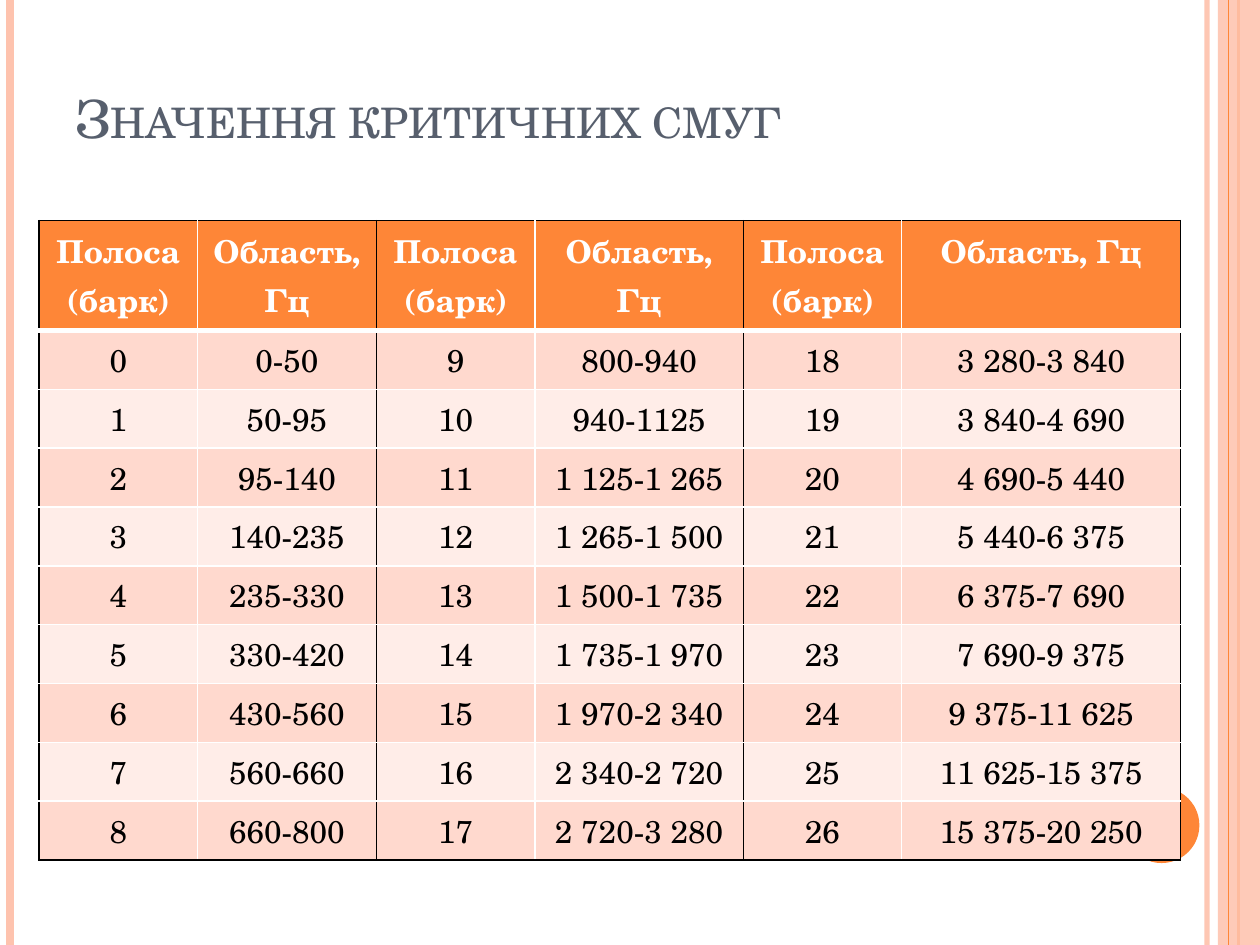
from dataclasses import dataclass

from lxml import etree
from pptx import Presentation
from pptx.dml.color import RGBColor
from pptx.enum.shapes import MSO_CONNECTOR, MSO_SHAPE
from pptx.enum.text import MSO_ANCHOR, PP_ALIGN
from pptx.oxml.ns import qn
from pptx.util import Pt

STRAIGHT = MSO_CONNECTOR.STRAIGHT
RECT, OVAL = MSO_SHAPE.RECTANGLE, MSO_SHAPE.OVAL
BOTTOM, CENTER = MSO_ANCHOR.BOTTOM, PP_ALIGN.CENTER

WIDTH, HEIGHT = 720, 540
FONT = "TeX Gyre Schola"
ORANGE, PEACH, SLATE = "FE8637", "FEC3AE", "575F6D"
WHITE, BLACK = "FFFFFF", "000000"
BANDS = ("FFD9CE", "FFEDE8")

COL_WIDTHS = (90.4, 102.4, 90.4, 119.2, 90.4, 159.5)
HEADER_HEIGHT, ROW_HEIGHT = 62.8, 33.6
HEADERS = ("Полоса (барк)", "Область, Гц")
RANGES = (
    ("0-50", "50-95", "95-140", "140-235", "235-330",
     "330-420", "430-560", "560-660", "660-800"),
    ("800-940", "940-1125", "1 125-1 265", "1 265-1 500", "1 500-1 735",
     "1 735-1 970", "1 970-2 340", "2 340-2 720", "2 720-3 280"),
    ("3 280-3 840", "3 840-4 690", "4 690-5 440", "5 440-6 375", "6 375-7 690",
     "7 690-9 375", "9 375-11 625", "11 625-15 375", "15 375-20 250"),
)
ROWS = len(RANGES[0])


@dataclass
class Stripe:
    x: float
    color: str
    width: float
    alpha: int = 100


@dataclass
class Block:
    kind: MSO_SHAPE
    x: float
    y: float
    w: float
    h: float
    color: str
    alpha: int = 100


DECOR = (
    Stripe(689.8, PEACH, 3, 93),
    Stripe(5.8, PEACH, 4.5),
    Stripe(707.8, ORANGE, 1.5),
    Block(RECT, 696, 0, 24, HEIGHT, PEACH, 87),
    Stripe(702, ORANGE, 0.75),
    Block(OVAL, 642.2, 450, 43.2, 43.2, ORANGE),
)


def rgb(value: str) -> RGBColor:
    return RGBColor.from_string(value)


def set_alpha(sp, percent: int) -> None:
    """Make the first colour of a shape or connector translucent."""
    if percent < 100:
        color = next(sp._element.spPr.iter(qn("a:srgbClr")))
        etree.SubElement(color, qn("a:alpha"), val=str(percent * 1000))


def add_stripe(slide, stripe: Stripe) -> None:
    x = Pt(stripe.x)
    line = slide.shapes.add_connector(STRAIGHT, x, 0, x, Pt(HEIGHT))
    line.line.color.rgb = rgb(stripe.color)
    line.line.width = Pt(stripe.width)
    set_alpha(line, stripe.alpha)
    etree.SubElement(line._element.spPr, qn("a:effectLst"))


def add_block(slide, block: Block) -> None:
    sp = slide.shapes.add_shape(
        block.kind, Pt(block.x), Pt(block.y), Pt(block.w), Pt(block.h))
    sp.shadow.inherit = False
    sp.fill.solid()
    sp.fill.fore_color.rgb = rgb(block.color)
    sp.line.fill.background()
    set_alpha(sp, block.alpha)


def style_run(r, size: float, color: str, bold: bool = False) -> None:
    r.font.name = FONT
    r.font.size = Pt(size)
    r.font.bold = bold
    r.font.color.rgb = rgb(color)


def add_title(slide, text: str) -> None:
    sp = slide.shapes.add_textbox(Pt(36), Pt(21.6), Pt(588), Pt(67))
    tf = sp.text_frame
    tf.word_wrap = True
    tf.vertical_anchor = BOTTOM
    tf.text = text
    r = tf.paragraphs[0].runs[0]
    style_run(r, 30, SLATE)
    r._r.get_or_add_rPr().set("cap", "small")


def set_border(cell, side: str, color: str, width: float = 1) -> None:
    ln = etree.SubElement(cell._tc.get_or_add_tcPr(), qn(f"a:ln{side}"),
                          w=str(Pt(width)))
    fill = etree.SubElement(ln, qn("a:solidFill"))
    etree.SubElement(fill, qn("a:srgbClr"), val=color)


def format_cell(cell, row: int, col: int, text: str) -> None:
    header, first_of_pair = row == 0, col % 2 == 0
    set_border(cell, "L", BLACK if first_of_pair else WHITE)
    set_border(cell, "R", WHITE if first_of_pair else BLACK)
    set_border(cell, "T", BLACK if header else WHITE, 3 if row == 1 else 1)
    set_border(cell, "B", BLACK if row == ROWS else WHITE, 3 if header else 1)
    cell.fill.solid()
    cell.fill.fore_color.rgb = rgb(ORANGE if header else BANDS[(row - 1) % 2])
    cell.text_frame.text = text
    p = cell.text_frame.paragraphs[0]
    p.alignment = CENTER
    p.line_spacing = Pt(27.8 if header else 26.4)
    style_run(p.runs[0], 18, WHITE if header else BLACK, header)


def cell_text(row: int, col: int) -> str:
    group, part = divmod(col, 2)
    if row == 0:
        return HEADERS[part]
    if part == 0:
        return str(group * ROWS + row - 1)
    return RANGES[group][row - 1]


def add_band_table(slide) -> None:
    height = HEADER_HEIGHT + ROWS * ROW_HEIGHT
    table = slide.shapes.add_table(
        ROWS + 1, len(COL_WIDTHS), Pt(22.4), Pt(126),
        Pt(sum(COL_WIDTHS)), Pt(height)).table
    table.first_row = table.horz_banding = False
    for column, width in zip(table.columns, COL_WIDTHS):
        column.width = Pt(width)
    for i, row in enumerate(table.rows):
        row.height = Pt(ROW_HEIGHT if i else HEADER_HEIGHT)
        for j, cell in enumerate(row.cells):
            format_cell(cell, i, j, cell_text(i, j))


def main() -> None:
    prs = Presentation()
    prs.slide_width, prs.slide_height = Pt(WIDTH), Pt(HEIGHT)
    slide = prs.slides.add_slide(prs.slide_layouts[6])
    for item in DECOR:
        if isinstance(item, Stripe):
            add_stripe(slide, item)
        else:
            add_block(slide, item)
    add_title(slide, "Значення критичних смуг")
    add_band_table(slide)
    prs.save("out.pptx")


if __name__ == "__main__":
    main()
